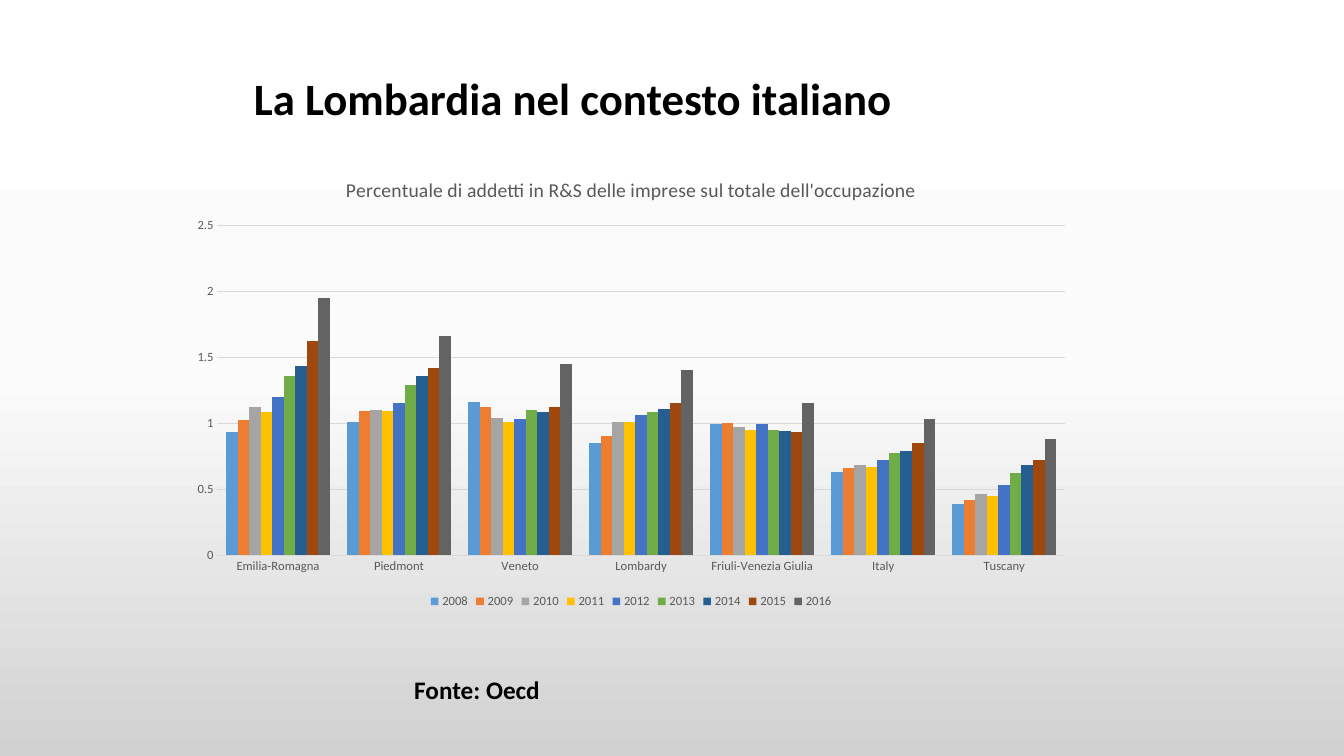
from copy import deepcopy

from pptx import Presentation
from pptx.chart.data import CategoryChartData as ChartData
from pptx.dml.color import RGBColor as RGB
from pptx.enum.chart import XL_CHART_TYPE as Kind
from pptx.enum.chart import XL_LEGEND_POSITION as Side
from pptx.enum.chart import XL_TICK_MARK as Tick
from pptx.enum.text import MSO_AUTO_SIZE as Fit
from pptx.oxml.ns import qn
from pptx.util import Inches, Pt

FONT = "Calibri"
BLACK = RGB(0x00, 0x00, 0x00)
GRAY = RGB(0x59, 0x59, 0x59)
GRID = RGB(0xD9, 0xD9, 0xD9)
SHADES = [
    (0, RGB(0xFF, 0xFF, 0xFF)),
    (0.5, RGB(0xFB, 0xFB, 0xFB)),
    (1, RGB(0xD1, 0xD1, 0xD1)),
]

REGIONS = ["Emilia-Romagna", "Piedmont", "Veneto", "Lombardy",
           "Friuli-Venezia Giulia", "Italy", "Tuscany"]

# Year, bar colour, one value per region
YEARS = [
    ("2008", RGB(0x5B, 0x9B, 0xD5), [0.93, 1.01, 1.16, 0.85, 0.99, 0.63, 0.39]),
    ("2009", RGB(0xED, 0x7D, 0x31), [1.02, 1.09, 1.12, 0.9, 1, 0.66, 0.42]),
    ("2010", RGB(0xA5, 0xA5, 0xA5), [1.12, 1.1, 1.04, 1.01, 0.97, 0.68, 0.46]),
    ("2011", RGB(0xFF, 0xC0, 0x00), [1.08, 1.09, 1.01, 1.01, 0.95, 0.67, 0.45]),
    ("2012", RGB(0x44, 0x72, 0xC4), [1.2, 1.15, 1.03, 1.06, 0.99, 0.72, 0.53]),
    ("2013", RGB(0x70, 0xAD, 0x47), [1.36, 1.29, 1.1, 1.08, 0.95, 0.77, 0.62]),
    ("2014", RGB(0x25, 0x5E, 0x91), [1.43, 1.36, 1.08, 1.11, 0.94, 0.79, 0.68]),
    ("2015", RGB(0x9E, 0x48, 0x0E), [1.62, 1.42, 1.12, 1.15, 0.93, 0.85, 0.72]),
    ("2016", RGB(0x63, 0x63, 0x63), [1.95, 1.66, 1.45, 1.4, 1.15, 1.03, 0.88]),
]


def set_font(font, size, color, bold=False):
    font.name = FONT
    font.size = Pt(size)
    font.color.rgb = color
    font.bold = bold


def shade_back(slide):
    fill = slide.background.fill
    fill.gradient()
    fill.gradient_angle = 270
    # The default gradient has two stops; add the third
    stops = slide.element.find(".//" + qn("a:gsLst"))
    stops.append(deepcopy(stops[-1]))
    for stop, (place, color) in zip(fill.gradient_stops, SHADES):
        stop.position = place
        stop.color.rgb = color


def add_label(slide, text, box, size, wrap=True):
    frame = slide.shapes.add_textbox(*map(Inches, box)).text_frame
    frame.word_wrap = wrap
    frame.auto_size = Fit.SHAPE_TO_FIT_TEXT
    line = frame.paragraphs[0]
    line.text = text
    set_font(line.font, size, BLACK, bold=True)


def style_axis(axis):
    axis.major_tick_mark = axis.minor_tick_mark = Tick.NONE
    axis.format.line.fill.background()
    set_font(axis.tick_labels.font, 9, GRAY)


def add_bars(slide, title, box):
    data = ChartData()
    data.categories = REGIONS
    for year, _, values in YEARS:
        data.add_series(year, values)
    chart = slide.shapes.add_chart(
        Kind.COLUMN_CLUSTERED, *map(Inches, box), data).chart
    set_font(chart.font, 10, BLACK)

    # Title
    chart.has_title = True
    head = chart.chart_title
    head.include_in_layout = False
    line = head.text_frame.paragraphs[0]
    line.text = title
    set_font(line.font, 14, GRAY)

    # Legend
    chart.has_legend = True
    chart.legend.position = Side.BOTTOM
    chart.legend.include_in_layout = False
    set_font(chart.legend.font, 9, GRAY)

    # Axes and grid
    style_axis(chart.category_axis)
    scale = chart.value_axis
    style_axis(scale)
    scale.minimum_scale = 0
    scale.maximum_scale = 2.5
    scale.major_unit = 0.5
    grid = scale.major_gridlines.format.line
    grid.color.rgb = GRID
    grid.width = Pt(0.75)

    # Bars
    plot = chart.plots[0]
    plot.vary_by_categories = False
    plot.gap_width = 150
    plot.overlap = 0
    for bars, (_, color, _) in zip(plot.series, YEARS):
        bars.format.fill.solid()
        bars.format.fill.fore_color.rgb = color


def main():
    deck = Presentation()
    deck.slide_width = Inches(13.33)
    deck.slide_height = Inches(7.5)
    slide = deck.slides.add_slide(deck.slide_layouts[6])
    shade_back(slide)
    add_bars(
        slide,
        "Percentuale di addetti in R&S delle imprese sul totale dell'occupazione",
        (1.78, 1.57, 8.96, 4.51))
    add_label(slide, "La Lombardia nel contesto italiano",
              (2.42, 0.65, 6.66, 0.64), 32)
    add_label(slide, "Fonte: Oecd", (4.01, 6.64, 1.45, 0.4), 18, wrap=False)
    deck.save("out.pptx")


if __name__ == "__main__":
    main()
